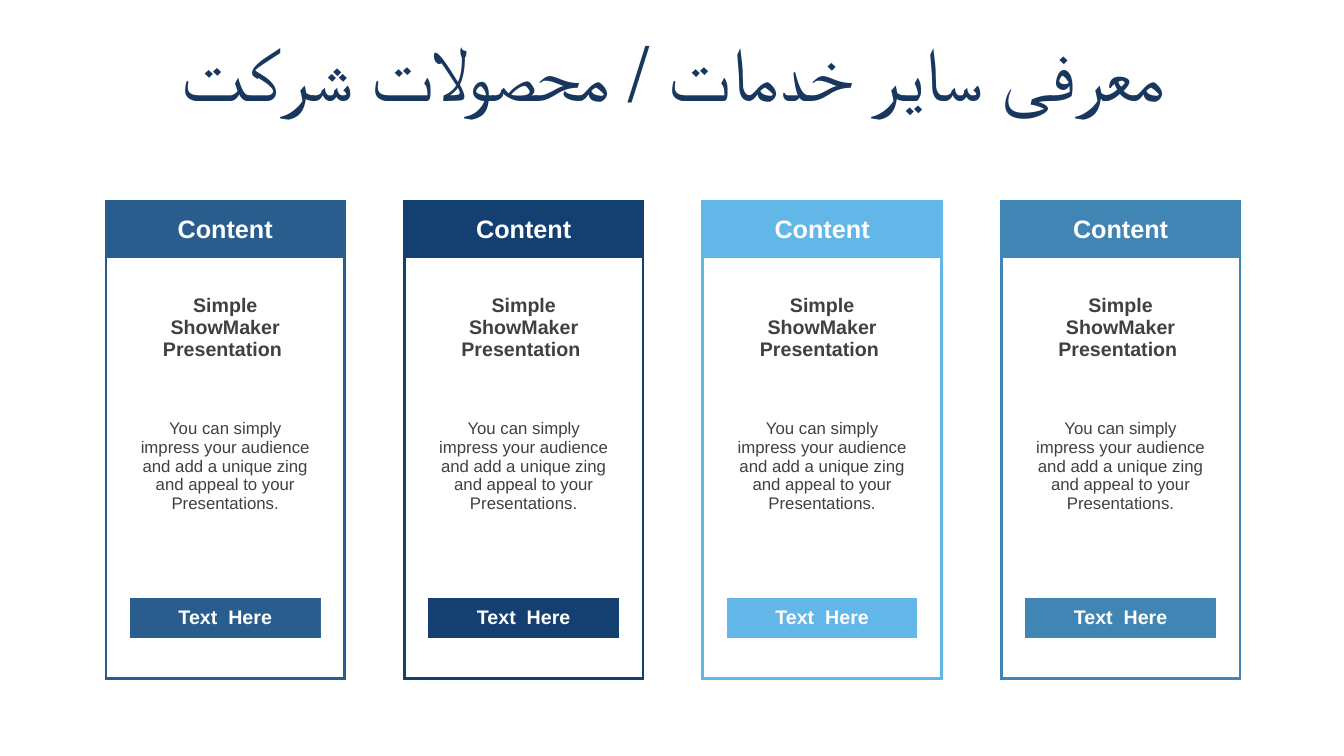
from lxml.etree import SubElement
from pptx import Presentation
from pptx.dml.color import RGBColor
from pptx.enum.text import MSO_ANCHOR as Anchor, PP_ALIGN as Align
from pptx.oxml import parse_xml
from pptx.oxml.ns import nsdecls, qn
from pptx.util import Inches, Pt

WHITE = RGBColor(0xFF, 0xFF, 0xFF)
GREY = RGBColor(0x40, 0x40, 0x40)
TITLE_NAVY = RGBColor(0x17, 0x37, 0x5E)
STEEL = RGBColor(0x28, 0x5D, 0x8D)
NAVY = RGBColor(0x13, 0x40, 0x70)
SKY = RGBColor(0x62, 0xB7, 0xE8)
TEAL = RGBColor(0x41, 0x85, 0xB5)

COLUMN_WIDTHS = (0.23, 1.89, 0.23)
ROW_HEIGHTS = (0.56, 1.16, 0.84, 0.97, 0.37, 0.4, 0.37)
HEADER, HEADLINE, BODY, BODY_END, BUTTON = 0, 1, 2, 3, 5
CARD_LEFT, CARD_TOP, CARD_STEP = 1.05, 2, 2.96
CARD_TEXTS = (
    (HEADER, "Content", 18, WHITE, True),
    (HEADLINE, "Simple ShowMaker Presentation ", 14, GREY, True),
    (BODY, "You can simply impress your audience and add a unique zing "
           "and appeal to your Presentations.", 12, GREY, False),
    (BUTTON, "Text  Here", 14, WHITE, True),
)


class CardSlide:
    """Draws the title and the service cards on one slide in a shared style."""

    font_name = "Arial"
    border = Pt(2.25)

    def __init__(self, slide):
        self.slide = slide

    def set_text(self, frame, text, size, color, bold=False):
        frame.text = text
        line = frame.paragraphs[0]
        line.alignment = Align.CENTER
        font = line.runs[0].font
        font.name, font.size, font.bold = self.font_name, Pt(size), bold
        font.color.rgb = color
        return line

    def title(self, text, left, top, width, height):
        heading = self.slide.shapes.add_textbox(
            Inches(left), Inches(top), Inches(width), Inches(height))
        frame = heading.text_frame
        frame.word_wrap = True
        frame.vertical_anchor = Anchor.MIDDLE
        line = self.set_text(frame, text, 54, TITLE_NAVY)
        line.line_spacing = 0.9
        line.space_before = Pt(10)
        line._p.get_or_add_pPr().set("rtl", "1")

    def paint(self, cell, color, opacity=None):
        cell.fill.solid()
        cell.fill.fore_color.rgb = color
        if opacity:
            shade = cell._tc.tcPr.find(".//" + qn("a:srgbClr"))
            SubElement(shade, qn("a:alpha"), val=str(opacity * 1000))

    def outline(self, cell, color, edges):
        properties = cell._tc.get_or_add_tcPr()
        for index, (side, shown) in enumerate(edges.items()):
            ink = (f'<a:solidFill><a:srgbClr val="{color}"/></a:solidFill>'
                   if shown else "<a:noFill/>")
            width = self.border if shown else 0
            properties.insert(index, parse_xml(
                f'<a:ln{side} {nsdecls("a")} w="{width}">{ink}</a:ln{side}>'))

    def card(self, left, top, color):
        frame = self.slide.shapes.add_table(
            len(ROW_HEIGHTS), len(COLUMN_WIDTHS), Inches(left), Inches(top),
            Inches(sum(COLUMN_WIDTHS)), Inches(sum(ROW_HEIGHTS)))
        table = frame.table
        table.first_row = table.horz_banding = False
        for column, width in zip(table.columns, COLUMN_WIDTHS):
            column.width = Inches(width)
        for row, height in zip(table.rows, ROW_HEIGHTS):
            row.height = Inches(height)
        last_row, last_column = len(ROW_HEIGHTS) - 1, len(COLUMN_WIDTHS) - 1
        for r in range(last_row + 1):
            for c in range(last_column + 1):
                cell = table.cell(r, c)
                if r == HEADER or (r, c) == (BUTTON, 1):
                    self.paint(cell, color)
                else:
                    self.paint(cell, WHITE, 20 if r >= BODY else None)
                self.outline(cell, color, {
                    "L": c == 0, "R": c == last_column,
                    "T": r == 0, "B": r == last_row})
        table.cell(BODY, 1).merge(table.cell(BODY_END, 1))
        for r, text, size, ink, bold in CARD_TEXTS:
            cell = table.cell(r, 1)
            cell.vertical_anchor = Anchor.MIDDLE
            self.set_text(cell.text_frame, text, size, ink, bold)
        table.cell(HEADLINE, 1).margin_top = Inches(0.27)


def main():
    deck = Presentation()
    deck.slide_width, deck.slide_height = Inches(13.33), Inches(7.5)
    services = CardSlide(deck.slides.add_slide(deck.slide_layouts[6]))
    services.title("معرفی سایر خدمات / محصولات شرکت", 0.35, 0.37, 12.66, 0.79)
    for position, color in enumerate((STEEL, NAVY, SKY, TEAL)):
        services.card(CARD_LEFT + position * CARD_STEP, CARD_TOP, color)
    deck.save("out.pptx")


if __name__ == "__main__":
    main()
